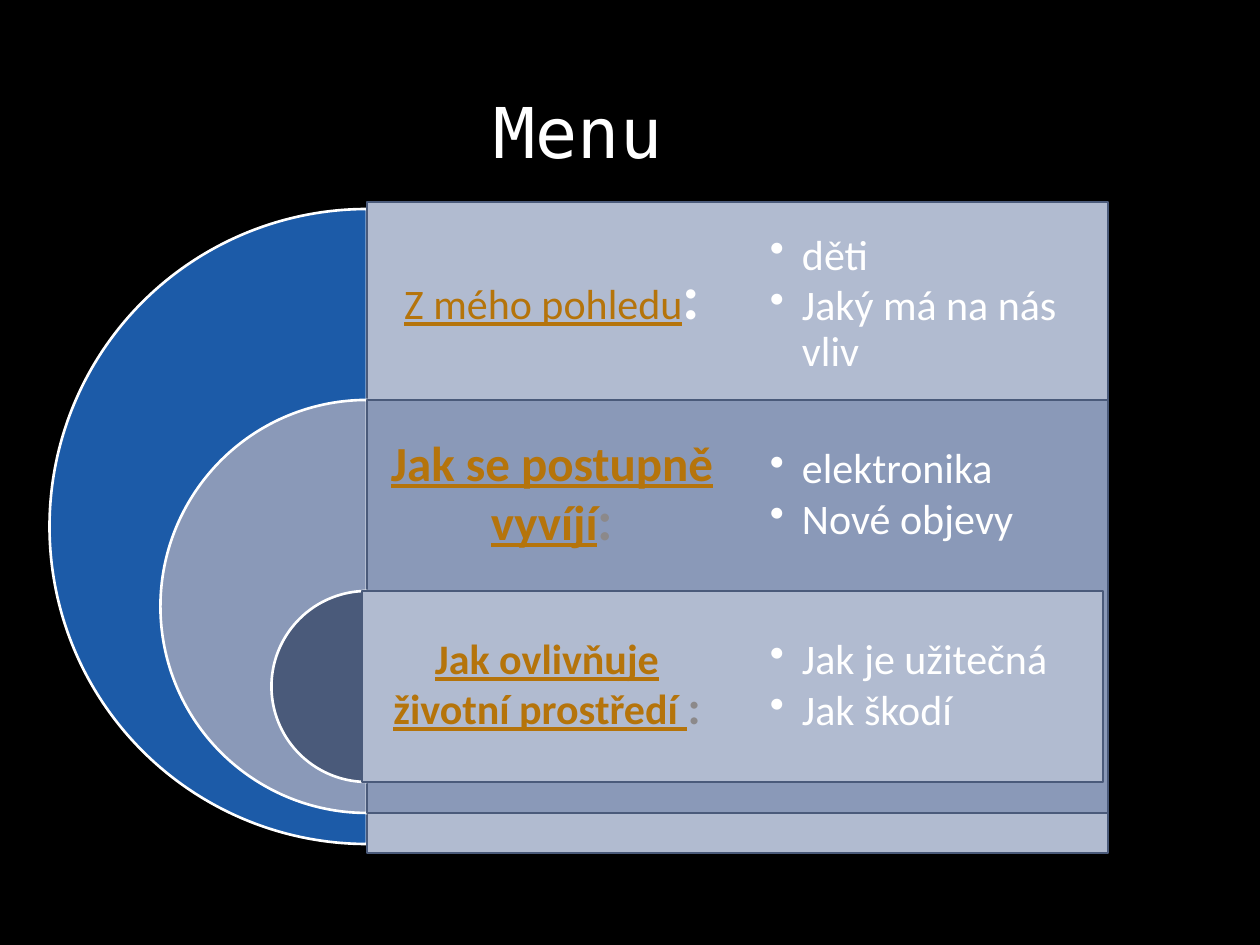
"""Build the Menu slide: three nested half circles with a heading and bullets each."""
from pptx import Presentation
from pptx.dml.color import RGBColor
from pptx.enum.shapes import MSO_SHAPE
from pptx.enum.text import MSO_ANCHOR, PP_ALIGN
from pptx.oxml.xmlchemy import OxmlElement
from pptx.util import Pt

SCALE = 914400 / 126
BLACK = RGBColor(0x00, 0x00, 0x00)
WHITE = RGBColor(0xFF, 0xFF, 0xFF)
BLUE = RGBColor(0x1C, 0x5B, 0xA8)
LIGHT = RGBColor(0xB1, 0xBB, 0xD0)
MIDDLE = RGBColor(0x8A, 0x99, 0xB8)
DARK = RGBColor(0x4A, 0x5A, 0x7A)
GOLD = RGBColor(0xB5, 0x74, 0x0B)
GREY = RGBColor(0x8C, 0x89, 0x8A)

FONT = "Calibri"
TITLE_FONT = "DejaVu Sans Mono"
TITLE_BOX = (49, 31, 1058, 148)
CENTER_X = 367
PANEL_WIDTH = 741
COLUMN_WIDTH = 370
DETAIL_LEFT = 736
FIRST_TOP = 209
ROW_HEIGHT = 191

LEVELS = [
    dict(heading="Z mého pohledu", size=24, bold=False,
         colon_size=36, colon_color=WHITE, inset=13,
         diameter=635, pie_color=BLUE, panel_color=LIGHT,
         panel=(367, 202, 651), heading_height=195,
         details=["děti", "Jaký má na nás vliv"]),
    dict(heading="Jak se postupně vyvíjí", size=28, bold=True,
         colon_size=32, colon_color=GREY, inset=15,
         diameter=413, pie_color=MIDDLE, panel_color=MIDDLE,
         panel=(367, 400, 413), heading_height=191,
         details=["elektronika", "Nové objevy"]),
    dict(heading="Jak ovlivňuje životní prostředí ", size=24, bold=True,
         colon_size=27, colon_color=GREY, inset=13,
         diameter=191, pie_color=DARK, panel_color=LIGHT,
         panel=(362, 591, 191), heading_height=191,
         details=["Jak je užitečná", "Jak škodí"]),
]


def px(value):
    return round(value * SCALE)


def box(*lengths):
    return [px(length) for length in lengths]


def add_block(slide, kind, place, fill, line):
    shape = slide.shapes.add_shape(kind, *box(*place))
    shape.shadow.inherit = False
    shape.fill.solid()
    shape.fill.fore_color.rgb = fill
    shape.line.color.rgb = line
    shape.line.width = Pt(1.5)
    return shape


def add_text_frame(slide, place, inset):
    text_frame = slide.shapes.add_textbox(*box(*place)).text_frame
    text_frame.word_wrap = True
    text_frame.vertical_anchor = MSO_ANCHOR.MIDDLE
    text_frame.margin_left = text_frame.margin_right = px(inset)
    text_frame.margin_top = text_frame.margin_bottom = px(inset)
    return text_frame


def style_run(run, size, color, font=FONT, bold=False, underline=False):
    run.font.name = font
    run.font.size = Pt(size)
    run.font.color.rgb = color
    run.font.bold = bold
    run.font.underline = underline


def add_bullet(paragraph):
    properties = paragraph._p.get_or_add_pPr()
    properties.set("marL", str(px(32)))
    properties.set("indent", str(px(-32)))
    bullet = OxmlElement("a:buChar")
    bullet.set("char", "•")
    properties.append(bullet)


def add_heading(slide, level, left, top):
    place = (left, top, COLUMN_WIDTH, level["heading_height"])
    paragraph = add_text_frame(slide, place, level["inset"]).paragraphs[0]
    paragraph.alignment = PP_ALIGN.CENTER
    paragraph.line_spacing = 0.9
    heading, colon = paragraph.add_run(), paragraph.add_run()
    heading.text, colon.text = level["heading"], ":"
    style_run(heading, level["size"], GOLD, bold=level["bold"], underline=True)
    style_run(colon, level["colon_size"], level["colon_color"], bold=True)


def add_details(slide, lines, top):
    place = (DETAIL_LEFT, top, COLUMN_WIDTH, ROW_HEIGHT)
    text_frame = add_text_frame(slide, place, 34)
    text_frame.text = "\n".join(lines)
    for paragraph in text_frame.paragraphs:
        paragraph.level = 1
        paragraph.line_spacing = 0.9
        paragraph.space_after = Pt(3)
        add_bullet(paragraph)
        style_run(paragraph.runs[0], 24, WHITE)


def main():
    presentation = Presentation()
    presentation.slide_width, presentation.slide_height = box(1260, 945)
    slide = presentation.slides.add_slide(presentation.slide_layouts[5])
    slide.background.fill.solid()
    slide.background.fill.fore_color.rgb = BLACK

    title = slide.shapes.title
    title.left, title.top, title.width, title.height = box(*TITLE_BOX)
    title.text_frame.text = "Menu"
    title.text_frame.vertical_anchor = MSO_ANCHOR.BOTTOM
    paragraph = title.text_frame.paragraphs[0]
    paragraph.alignment = PP_ALIGN.CENTER
    style_run(paragraph.runs[0], 40, WHITE, TITLE_FONT)

    for index, level in enumerate(LEVELS):
        row_top = FIRST_TOP + index * ROW_HEIGHT
        diameter = level["diameter"]
        pie_place = (CENTER_X - diameter / 2, row_top, diameter, diameter)
        pie = add_block(slide, MSO_SHAPE.PIE, pie_place, level["pie_color"], WHITE)
        pie.adjustments[0], pie.adjustments[1] = 54, 162
        left, top, height = level["panel"]
        add_block(slide, MSO_SHAPE.RECTANGLE, (left, top, PANEL_WIDTH, height),
                  level["panel_color"], DARK)
        add_heading(slide, level, left, top)

    for index, level in enumerate(LEVELS):
        add_details(slide, level["details"], FIRST_TOP + index * ROW_HEIGHT)

    presentation.save("out.pptx")


if __name__ == "__main__":
    main()
